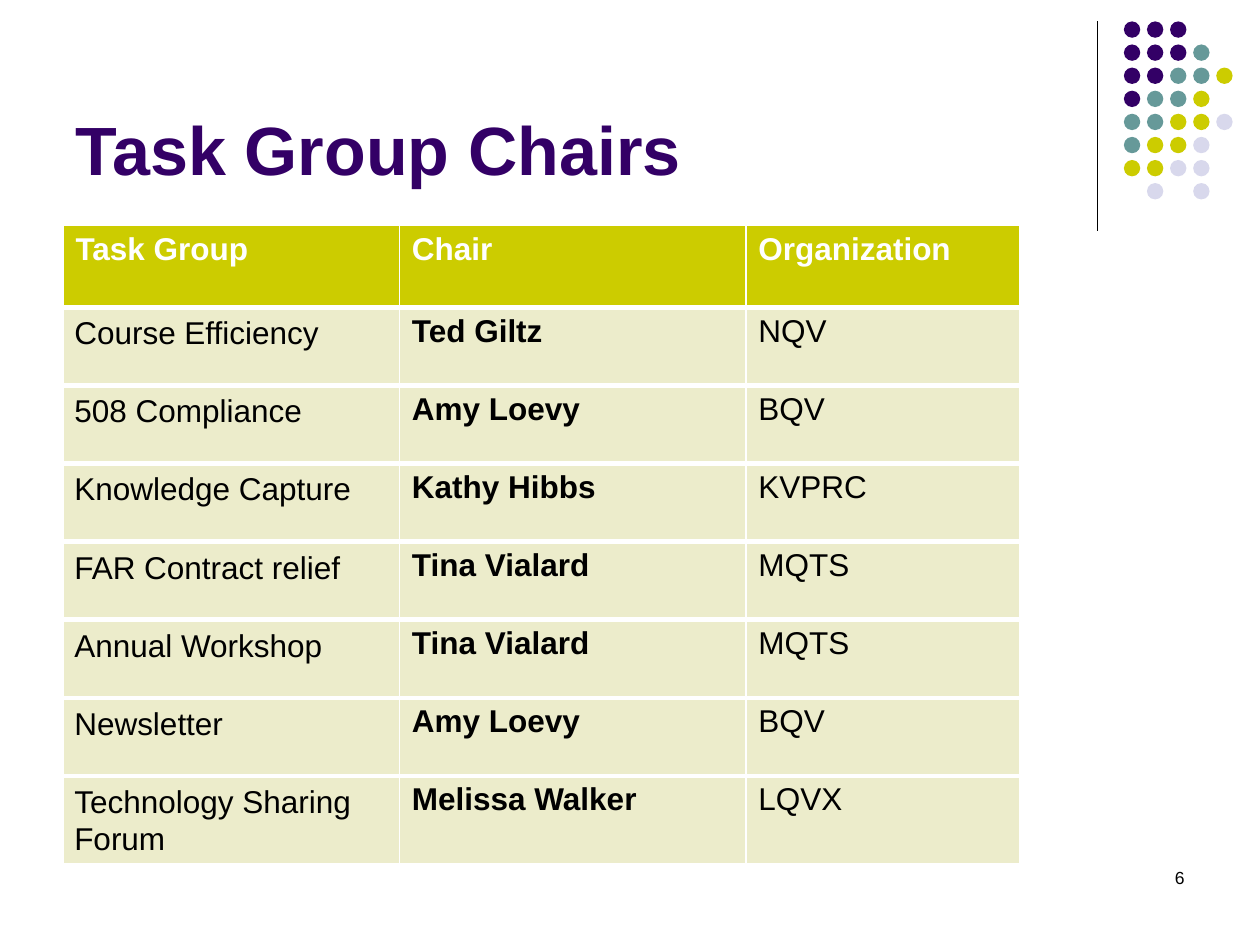
from lxml import etree
from pptx import Presentation
from pptx.dml.color import RGBColor
from pptx.enum.shapes import MSO_CONNECTOR, MSO_SHAPE
from pptx.enum.text import MSO_ANCHOR, MSO_AUTO_SIZE, PP_ALIGN
from pptx.oxml.ns import qn
from pptx.util import Inches, Pt

STRAIGHT, OVAL = MSO_CONNECTOR.STRAIGHT, MSO_SHAPE.OVAL
BOTTOM, NO_AUTOFIT = MSO_ANCHOR.BOTTOM, MSO_AUTO_SIZE.NONE
LEFT, RIGHT = PP_ALIGN.LEFT, PP_ALIGN.RIGHT

# Content
TITLE = "Task Group Chairs"
PAGE_NUMBER = "6"
HEADER = ("Task Group", "Chair", "Organization")
CHAIRS = [
    ("Course Efficiency", "Ted Giltz", "NQV"),
    ("508 Compliance", "Amy Loevy", "BQV"),
    ("Knowledge Capture", "Kathy Hibbs", "KVPRC"),
    ("FAR Contract relief", "Tina Vialard", "MQTS"),
    ("Annual Workshop", "Tina Vialard", "MQTS"),
    ("Newsletter", "Amy Loevy", "BQV"),
    ("Technology Sharing Forum", "Melissa Walker", "LQVX"),
]
# One letter per dot: purple, teal, olive, lavender
DOTS = ["PPP", "PPPT", "PPTTO", "PTTO", "TTOOL", "TOOL", "OOLL", " L L"]

# Theme
THEME = {
    "font": "Arial",
    "purple": "330066", "teal": "669999", "olive": "CCCC00",
    "lavender": "D8D8EC", "cream": "ECECCB",
    "black": "000000", "white": "FFFFFF",
    "title": 39, "table": 18, "number": 10,
    "thin": 1, "thick": 3,
}
DOT_COLORS = {"P": "purple", "T": "teal", "O": "olive", "L": "lavender"}

# Layout, in inches
COLUMN_WIDTHS = (2.67, 2.75, 2.17)
HEADER_HEIGHT, ROW_HEIGHT = 0.65, 0.62
DOT_LEFT, DOT_TOP, DOT_SIZE = 8.92, 0.17, 0.13
DOT_STEP = 0.55 / 3


def color(name):
    return RGBColor.from_string(THEME[name])


def write(frame, text, size, ink, bold=False, **paragraph_format):
    para = frame.paragraphs[0]
    for name, value in paragraph_format.items():
        setattr(para, name, value)
    span = para.add_run()
    span.text = text
    values = {"name": THEME["font"], "size": Pt(THEME[size]), "bold": bold}
    for name, value in values.items():
        setattr(span.font, name, value)
    span.font.color.rgb = color(ink)


def add_border(cell, side, weight):
    properties = cell._tc.get_or_add_tcPr()
    line = etree.SubElement(properties, qn(f"a:ln{side}"), w=str(Pt(THEME[weight])))
    fill = etree.SubElement(line, qn("a:solidFill"))
    etree.SubElement(fill, qn("a:srgbClr"), val=THEME["white"])


def add_decoration(page):
    rule = page.shapes.add_connector(
        STRAIGHT, Inches(8.71), Inches(0.17), Inches(8.71), Inches(1.83))
    rule.line.color.rgb = color("black")
    rule.line.width = Pt(0.75)
    etree.SubElement(rule._element.spPr, qn("a:effectLst"))

    group = page.shapes.add_group_shape()
    for row, letters in enumerate(DOTS):
        for column, letter in enumerate(letters):
            if letter == " ":
                continue
            dot = group.shapes.add_shape(
                OVAL, Inches(DOT_LEFT + column * DOT_STEP),
                Inches(DOT_TOP + row * DOT_STEP), Inches(DOT_SIZE), Inches(DOT_SIZE))
            dot.shadow.inherit = False
            dot.fill.solid()
            dot.fill.fore_color.rgb = color(DOT_COLORS[letter])
            dot.line.fill.background()


def add_title(page):
    box = page.shapes.title
    place = {"left": 0.5, "top": 0.13, "width": 8.25, "height": 1.42}
    for name, value in place.items():
        setattr(box, name, Inches(value))
    frame = box.text_frame
    values = {"vertical_anchor": BOTTOM, "word_wrap": True, "auto_size": NO_AUTOFIT}
    for name, value in values.items():
        setattr(frame, name, value)
    write(frame, TITLE, "title", "purple", True, alignment=LEFT)


def add_chairs_table(page):
    rows = [HEADER, *CHAIRS]
    last = len(rows) - 1
    table = page.shapes.add_table(
        len(rows), len(HEADER), Inches(0.5), Inches(1.79),
        Inches(sum(COLUMN_WIDTHS)),
        Inches(HEADER_HEIGHT + len(CHAIRS) * ROW_HEIGHT)).table
    for column, width in zip(table.columns, COLUMN_WIDTHS):
        column.width = Inches(width)
    for index, texts in enumerate(rows):
        is_header = index == 0
        table.rows[index].height = Inches(HEADER_HEIGHT if is_header else ROW_HEIGHT)
        borders = {"L": "thin", "R": "thin",
                   "T": "thin" if is_header else "thick",
                   "B": "thin" if index == last else "thick"}
        for position, text in enumerate(texts):
            cell = table.cell(index, position)
            for side, weight in borders.items():
                add_border(cell, side, weight)
            cell.fill.solid()
            cell.fill.fore_color.rgb = color("olive" if is_header else "cream")
            spacing = {}
            if position == 0 and not is_header:
                cell.margin_left = cell.margin_right = Inches(0.09)
                spacing["line_spacing"] = 1.07
            write(cell.text_frame, text, "table",
                  "white" if is_header else "black",
                  is_header or position == 1, **spacing)


def add_page_number(page):
    box = page.shapes.add_textbox(Inches(7.17), Inches(6.83), Inches(2.33), Inches(0.5))
    box.text_frame.word_wrap = True
    write(box.text_frame, PAGE_NUMBER, "number", "black", alignment=RIGHT)


def main():
    deck = Presentation()
    deck.slide_width, deck.slide_height = Inches(10), Inches(7.5)
    page = deck.slides.add_slide(deck.slide_layouts.get_by_name("Title Only"))
    page.background.fill.solid()
    page.background.fill.fore_color.rgb = color("white")
    add_decoration(page)
    add_title(page)
    add_chairs_table(page)
    add_page_number(page)
    deck.save("out.pptx")


if __name__ == "__main__":
    main()
